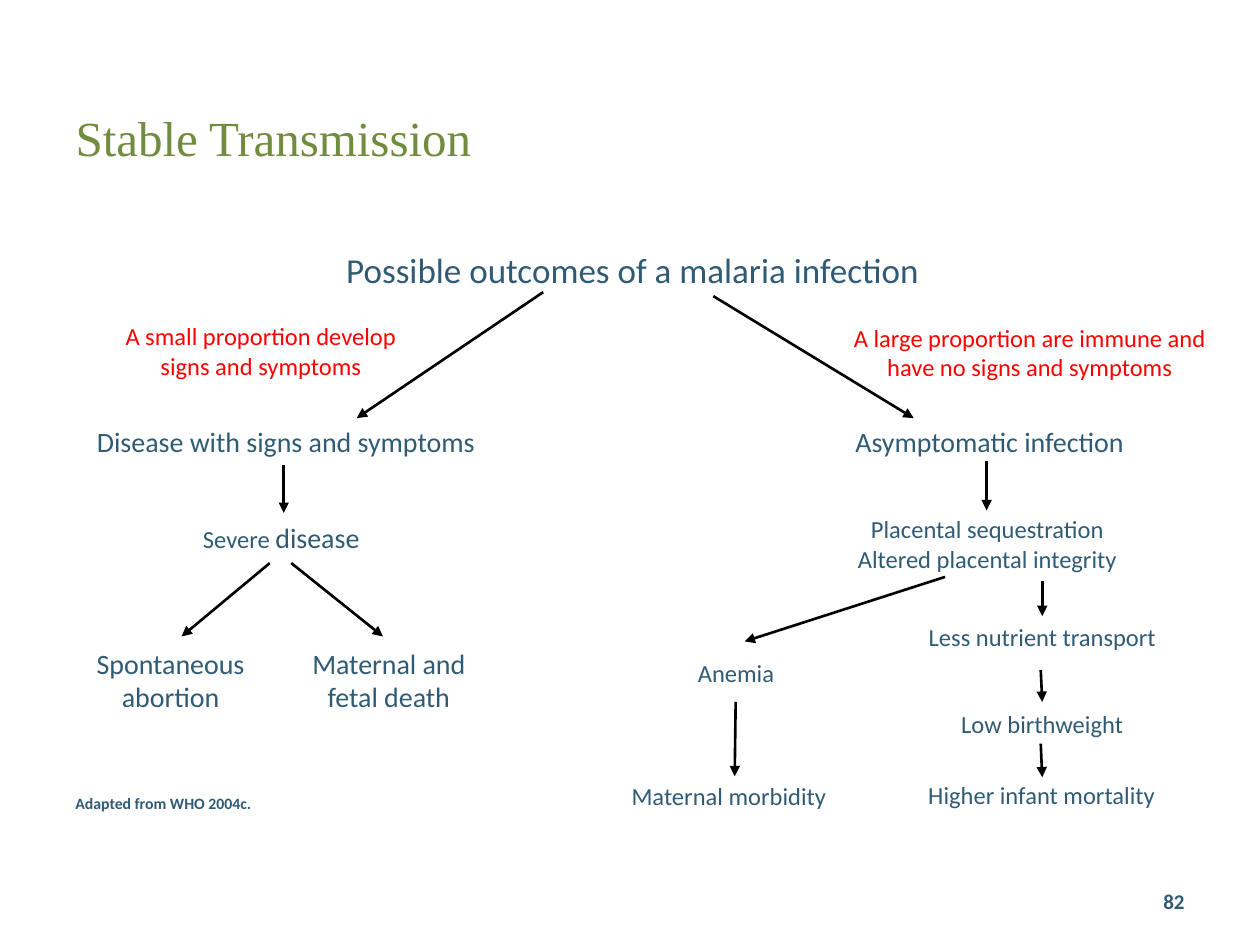
import pptx
import pptx.dml.color
import pptx.enum.shapes
import pptx.enum.text
import pptx.oxml
import pptx.oxml.ns
import pptx.util

Cm = pptx.util.Cm
Pt = pptx.util.Pt
Align = pptx.enum.text.PP_ALIGN
Anchor = pptx.enum.text.MSO_ANCHOR

BLUE, RED, GREEN, BLACK = "305B75", "FF0000", "718C3F", "000000"
NARROW = (0.13, 0.13)
WIDE = (0.25, 0.13)
FLUSH = (0, 0)

TITLE = ("Stable Transmission", (1.27, 1.27, 19.69, 2.21))
OUTCOMES = [
    ("Possible outcomes of a malaria infection", (2.95, 4.88, 19.61, 0.91), 20, NARROW, Anchor.TOP),
    ("Disease with signs and symptoms", (1.5, 8.43, 8.53, 0.94), 16, NARROW, Anchor.TOP),
    ("Spontaneous abortion", (1.47, 12.9, 3.94, 1.63), 16, WIDE, Anchor.TOP),
    ("Maternal and fetal death", (5.87, 12.9, 3.94, 1.63), 16, WIDE, Anchor.TOP),
    ("Asymptomatic infection", (16.71, 8.43, 6.48, 0.86), 16, NARROW, Anchor.TOP),
    ("Placental sequestration\nAltered placental integrity", (16.36, 10.24, 7.09, 1.4), 14, NARROW, Anchor.TOP),
    ("Anemia", (12.95, 13.13, 3.78, 0.84), 14, NARROW, Anchor.TOP),
    ("Maternal morbidity", (12.04, 15.67, 5.31, 0.74), 14, NARROW, Anchor.MIDDLE),
    ("Less nutrient transport", (18.31, 12.4, 5.41, 1.07), 14, NARROW, Anchor.TOP),
    ("Low birthweight", (18.42, 14.15, 5.18, 0.86), 14, NARROW, Anchor.MIDDLE),
    ("Higher infant mortality", (18.36, 15.65, 5.28, 0.76), 14, FLUSH, Anchor.MIDDLE),
]
SEVERE = (("Severe ", 14), ("disease", 16))
SEVERE_PLACE = (3.18, 10.36, 4.98, 0.94)
PROPORTIONS = [
    ("A small proportion develop signs and symptoms", (1.83, 6.35, 6.86, 1.45)),
    ("A large proportion are immune and have no signs and symptoms", (16.76, 6.38, 8, 1.45)),
]
CITATION = ("Adapted from WHO 2004c.", (1.27, 15.88, 4.65, 0.64))
PAGE_NUMBER = ("82", (18.21, 17.65, 5.92, 1.02))
ARROWS = [
    (10.95, 5.89, 7.19, 8.43),
    (14.38, 5.97, 18.42, 8.43),
    (5.72, 9.37, 5.72, 10.34),
    (5.44, 11.35, 3.66, 12.83),
    (5.87, 11.35, 7.72, 12.83),
    (19.89, 9.3, 19.89, 10.29),
    (19.05, 11.63, 15.01, 12.93),
    (14.83, 14.15, 14.81, 15.65),
    (21.01, 11.71, 21.01, 12.42),
    (20.98, 13.51, 21.01, 14.15),
    (20.98, 14.99, 21.01, 15.67),
]


def color(hex_code):
    return pptx.dml.color.RGBColor.from_string(hex_code)


def format_font(font, size, hex_code, name="Calibri", bold=False):
    font.name = name
    font.size = Pt(size)
    font.bold = bold
    font.color.rgb = color(hex_code)


def add_text(slide, text, place, size, hex_code=BLUE, insets=WIDE,
             anchor=Anchor.TOP, align=Align.CENTER, bold=False):
    frame = slide.shapes.add_textbox(*map(Cm, place)).text_frame
    frame.word_wrap = True
    frame.vertical_anchor = anchor
    frame.margin_left = frame.margin_right = Cm(insets[0])
    frame.margin_top = frame.margin_bottom = Cm(insets[1])
    frame.text = text
    for paragraph in frame.paragraphs:
        paragraph.alignment = align
        for run in paragraph.runs:
            format_font(run.font, size, hex_code, bold=bold)
    return frame


def add_title(slide, text, place):
    title = slide.shapes.title
    title.left, title.top, title.width, title.height = map(Cm, place)
    frame = title.text_frame
    frame.auto_size = pptx.enum.text.MSO_AUTO_SIZE.NONE
    frame.vertical_anchor = Anchor.BOTTOM
    frame.text = text
    paragraph = frame.paragraphs[0]
    paragraph.alignment = Align.LEFT
    format_font(paragraph.runs[0].font, 28, GREEN, "Times New Roman")


def add_arrow(slide, ends):
    arrow = slide.shapes.add_connector(
        pptx.enum.shapes.MSO_CONNECTOR.STRAIGHT, *map(Cm, ends))
    arrow.line.width = Pt(1.5)
    arrow.line.color.rgb = color(BLACK)
    line = arrow.line._get_or_add_ln()
    head = pptx.oxml.parse_xml(
        f'<a:tailEnd {pptx.oxml.ns.nsdecls("a")} type="triangle"/>')
    line.append(head)
    effects = pptx.oxml.parse_xml(f'<a:effectLst {pptx.oxml.ns.nsdecls("a")}/>')
    line.addnext(effects)


def main():
    presentation = pptx.Presentation()
    presentation.slide_width = Cm(25.4)
    presentation.slide_height = Cm(19.05)
    slide = presentation.slides.add_slide(presentation.slide_layouts[5])

    add_title(slide, *TITLE)
    for text, place, size, insets, anchor in OUTCOMES:
        add_text(slide, text, place, size, insets=insets, anchor=anchor)

    severe = add_text(slide, "", SEVERE_PLACE, 14).paragraphs[0]
    for text, size in SEVERE:
        run = severe.add_run()
        run.text = text
        format_font(run.font, size, BLUE)

    for text, place in PROPORTIONS:
        add_text(slide, text, place, 14, RED)
    for ends in ARROWS:
        add_arrow(slide, ends)

    add_text(slide, *CITATION, 9, align=Align.LEFT, bold=True)
    add_text(slide, *PAGE_NUMBER, 12, anchor=Anchor.MIDDLE, align=Align.RIGHT, bold=True)
    presentation.save("out.pptx")


if __name__ == "__main__":
    main()
